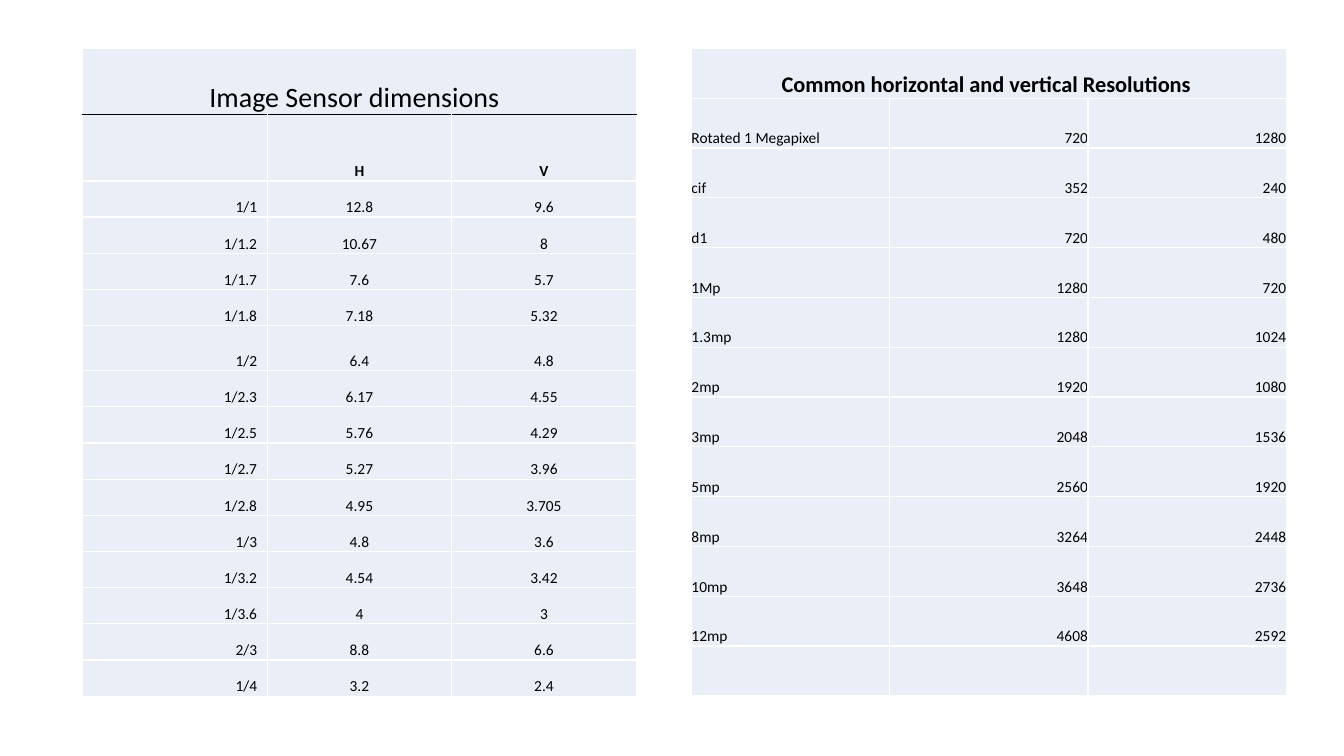
from lxml.etree import SubElement
from pptx import Presentation
from pptx.dml.color import RGBColor
from pptx.enum.text import MSO_ANCHOR, PP_ALIGN
from pptx.oxml.ns import qn
from pptx.util import Inches, Pt

SENSORS = [
    ("", "H", "V"),
    ("1/1", "12.8", "9.6"),
    ("1/1.2", "10.67", "8"),
    ("1/1.7", "7.6", "5.7"),
    ("1/1.8", "7.18", "5.32"),
    ("1/2", "6.4", "4.8"),
    ("1/2.3", "6.17", "4.55"),
    ("1/2.5", "5.76", "4.29"),
    ("1/2.7", "5.27", "3.96"),
    ("1/2.8", "4.95", "3.705"),
    ("1/3", "4.8", "3.6"),
    ("1/3.2", "4.54", "3.42"),
    ("1/3.6", "4", "3"),
    ("2/3", "8.8", "6.6"),
    ("1/4", "3.2", "2.4"),
]
SIZES = [
    ("Rotated 1 Megapixel", "720", "1280"),
    ("cif", "352", "240"),
    ("d1", "720", "480"),
    ("1Mp", "1280", "720"),
    ("1.3mp", "1280", "1024"),
    ("2mp", "1920", "1080"),
    ("3mp", "2048", "1536"),
    ("5mp", "2560", "1920"),
    ("8mp", "3264", "2448"),
    ("10mp", "3648", "2736"),
    ("12mp", "4608", "2592"),
    ("", "", ""),
]
LEFT, MID, RIGHT = PP_ALIGN.LEFT, PP_ALIGN.CENTER, PP_ALIGN.RIGHT


def color(code):
    return RGBColor.from_string(code)


class Sheet:
    """Draws styled tables on a slide, with lengths in percent of its size."""

    font, ink, tint, white = "Calibri", "000000", "EAEFF7", "FFFFFF"

    def __init__(self, deck):
        self.wide, self.high = deck.slide_width, deck.slide_height
        self.slide = deck.slides.add_slide(deck.slide_layouts[6])

    def border(self, cell, sides):
        props = cell._tc.get_or_add_tcPr()
        for side in "LRTB":
            line = SubElement(props, qn(f"a:ln{side}"), w=str(Pt(1)))
            fill = SubElement(line, qn("a:solidFill"))
            code = self.ink if side in sides else self.white
            SubElement(fill, qn("a:srgbClr"), val=code)

    def cell(self, cell, text, size, bold, align, inset=0, dark=""):
        cell.margin_left = cell.margin_top = cell.margin_bottom = 0
        cell.margin_right = Inches(inset)
        cell.vertical_anchor = MSO_ANCHOR.BOTTOM
        self.border(cell, dark)
        cell.fill.solid()
        cell.fill.fore_color.rgb = color(self.tint)
        para = cell.text_frame.paragraphs[0]
        para.text, para.alignment = text, align
        font = para.font
        font.name, font.size, font.bold = self.font, Pt(size), bold
        font.color.rgb = color(self.ink)

    def table(self, box, title, size, body, aligns, parts,
              bold=False, inset=0, rule=False, heads=0):
        x, y, w, h = box
        rows = [(title, "", "")] + body
        w, h = int(self.wide * w / 100), int(self.high * h / 100)
        frame = self.slide.shapes.add_table(
            len(rows), 3, int(self.wide * x / 100), int(self.high * y / 100), w, h)
        table = frame.table
        table.first_row = table.horz_banding = False
        for col in table.columns:
            col.width = w // 3
        for row, part in zip(table.rows, parts):
            row.height = int(h * part / sum(parts))
        for r, row in enumerate(rows):
            dark = {0: "B", 1: "T"}.get(r, "") if rule else ""
            for c, text in enumerate(row):
                self.cell(table.cell(r, c), text,
                          11 if r else size,
                          r <= heads if r else bold,
                          aligns[c] if r else MID,
                          0 if c else inset, dark)
        table.cell(0, 0).merge(table.cell(0, 2))


def main():
    deck = Presentation()
    deck.slide_width, deck.slide_height = Inches(13.33), Inches(7.5)
    sheet = Sheet(deck)
    sheet.table((6.15, 6.4, 41.2, 85.7), "Image Sensor dimensions", 20,
                SENSORS, (RIGHT, MID, MID),
                [0.66] * 2 + [0.36] * 4 + [0.45] + [0.36] * 9,
                inset=0.1, rule=True, heads=1)
    sheet.table((51.45, 6.4, 44.25, 85.7),
                "Common horizontal and vertical Resolutions ", 16,
                SIZES, (LEFT, RIGHT, RIGHT), [1] * 13, bold=True)
    deck.save("out.pptx")


if __name__ == "__main__":
    main()
